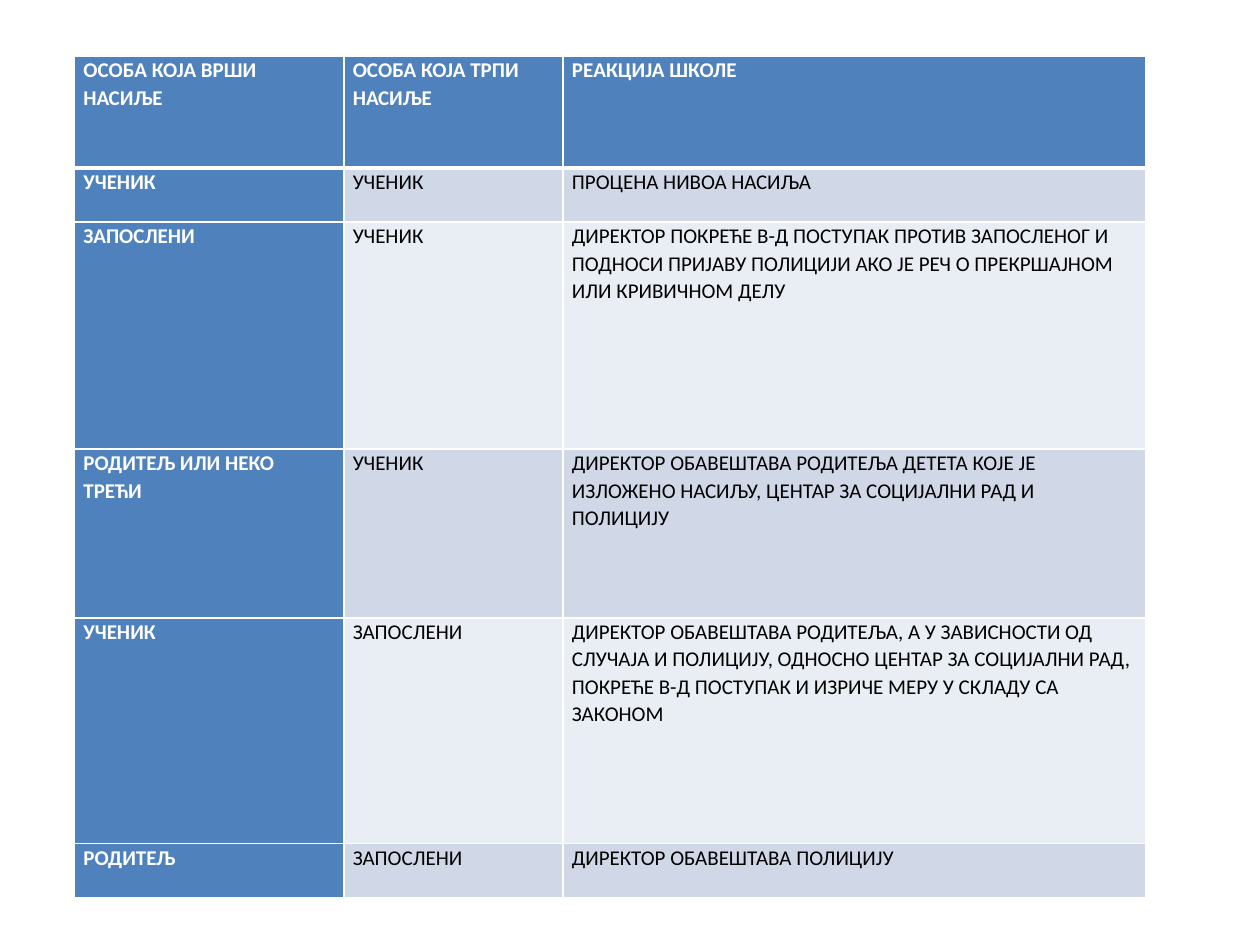
from dataclasses import dataclass

from lxml import etree
from pptx import Presentation
from pptx.dml.color import RGBColor
from pptx.enum import text
from pptx.oxml import ns
from pptx.util import Pt


@dataclass(frozen=True)
class Theme:
    font: str = "Calibri"
    size: float = 12
    accent: str = "4F81BD"
    bands: tuple = ("D0D8E8", "E9EDF4")
    light: str = "FFFFFF"
    dark: str = "000000"
    thin: float = 1
    thick: float = 3


THEME = Theme()

COLUMN_WIDTHS = (154, 125.3, 333)
ROW_HEIGHTS = (64, 31, 129.6, 96.5, 129, 31)
ROWS = (
    ("ОСОБА КОЈА ВРШИ НАСИЉЕ", "ОСОБА КОЈА ТРПИ НАСИЉЕ", "РЕАКЦИЈА ШКОЛЕ"),
    ("УЧЕНИК", "УЧЕНИК", "ПРОЦЕНА НИВОА НАСИЉА"),
    ("ЗАПОСЛЕНИ", "УЧЕНИК",
     "ДИРЕКТОР ПОКРЕЋЕ В-Д ПОСТУПАК ПРОТИВ ЗАПОСЛЕНОГ И ПОДНОСИ ПРИЈАВУ "
     "ПОЛИЦИЈИ АКО ЈЕ РЕЧ О ПРЕКРШАЈНОМ ИЛИ КРИВИЧНОМ ДЕЛУ"),
    ("РОДИТЕЉ ИЛИ НЕКО ТРЕЋИ", "УЧЕНИК",
     "ДИРЕКТОР ОБАВЕШТАВА РОДИТЕЉА ДЕТЕТА КОЈЕ ЈЕ ИЗЛОЖЕНО НАСИЉУ, "
     "ЦЕНТАР ЗА СОЦИЈАЛНИ РАД И ПОЛИЦИЈУ"),
    ("УЧЕНИК", "ЗАПОСЛЕНИ",
     "ДИРЕКТОР ОБАВЕШТАВА РОДИТЕЉА, А У ЗАВИСНОСТИ ОД СЛУЧАЈА И ПОЛИЦИЈУ, "
     "ОДНОСНО ЦЕНТАР ЗА СОЦИЈАЛНИ РАД, ПОКРЕЋЕ В-Д ПОСТУПАК И ИЗРИЧЕ МЕРУ "
     "У СКЛАДУ СА ЗАКОНОМ"),
    ("РОДИТЕЉ", "ЗАПОСЛЕНИ", "ДИРЕКТОР ОБАВЕШТАВА ПОЛИЦИЈУ"),
)


def write_text(frame, wording, *, color, bold=False):
    para = frame.paragraphs[0]
    para.alignment = text.PP_ALIGN.LEFT
    para.line_spacing = 1.07
    para.space_after = Pt(8)
    span = para.add_run()
    span.text = wording
    span.font.name = THEME.font
    span.font.size = Pt(THEME.size)
    span.font.bold = bold
    span.font.color.rgb = RGBColor.from_string(color)


def set_borders(cell, *, top, bottom):
    properties = cell._tc.get_or_add_tcPr()
    widths = {"lnL": THEME.thin, "lnR": THEME.thin, "lnT": top, "lnB": bottom}
    # Borders come before the fill in the cell properties
    for index, (side, width) in enumerate(widths.items()):
        line = etree.Element(ns.qn(f"a:{side}"), w=str(Pt(width)))
        fill = etree.SubElement(line, ns.qn("a:solidFill"))
        etree.SubElement(fill, ns.qn("a:srgbClr"), val=THEME.light)
        properties.insert(index, line)


def format_cell(cell, wording, row, column):
    heading = row == 0 or column == 0
    fill = THEME.accent if heading else THEME.bands[(row - 1) % 2]
    cell.fill.solid()
    cell.fill.fore_color.rgb = RGBColor.from_string(fill)
    cell.margin_left = cell.margin_right = Pt(5)
    cell.margin_top = cell.margin_bottom = 0
    cell.vertical_anchor = text.MSO_ANCHOR.TOP
    write_text(cell.text_frame, wording, bold=heading,
               color=THEME.light if heading else THEME.dark)
    set_borders(cell, top=THEME.thick if row == 1 else THEME.thin,
                bottom=THEME.thick if row == 0 else THEME.thin)


def add_reaction_table(page, box):
    table = page.shapes.add_table(len(ROWS), len(COLUMN_WIDTHS),
                                  *map(Pt, box)).table
    # Share the box among columns and rows
    for column, width in zip(table.columns, COLUMN_WIDTHS):
        column.width = Pt(box[2] * width / sum(COLUMN_WIDTHS))
    for row, height in zip(table.rows, ROW_HEIGHTS):
        row.height = Pt(box[3] * height / sum(ROW_HEIGHTS))
    for r, wordings in enumerate(ROWS):
        for c, wording in enumerate(wordings):
            format_cell(table.cell(r, c), wording, r, c)


def main():
    deck = Presentation()
    deck.slide_width, deck.slide_height = Pt(720), Pt(540)
    page = deck.slides.add_slide(deck.slide_layouts[6])
    add_reaction_table(page, (42.7, 32, 612, 481.1))
    deck.save("out.pptx")


if __name__ == "__main__":
    main()
